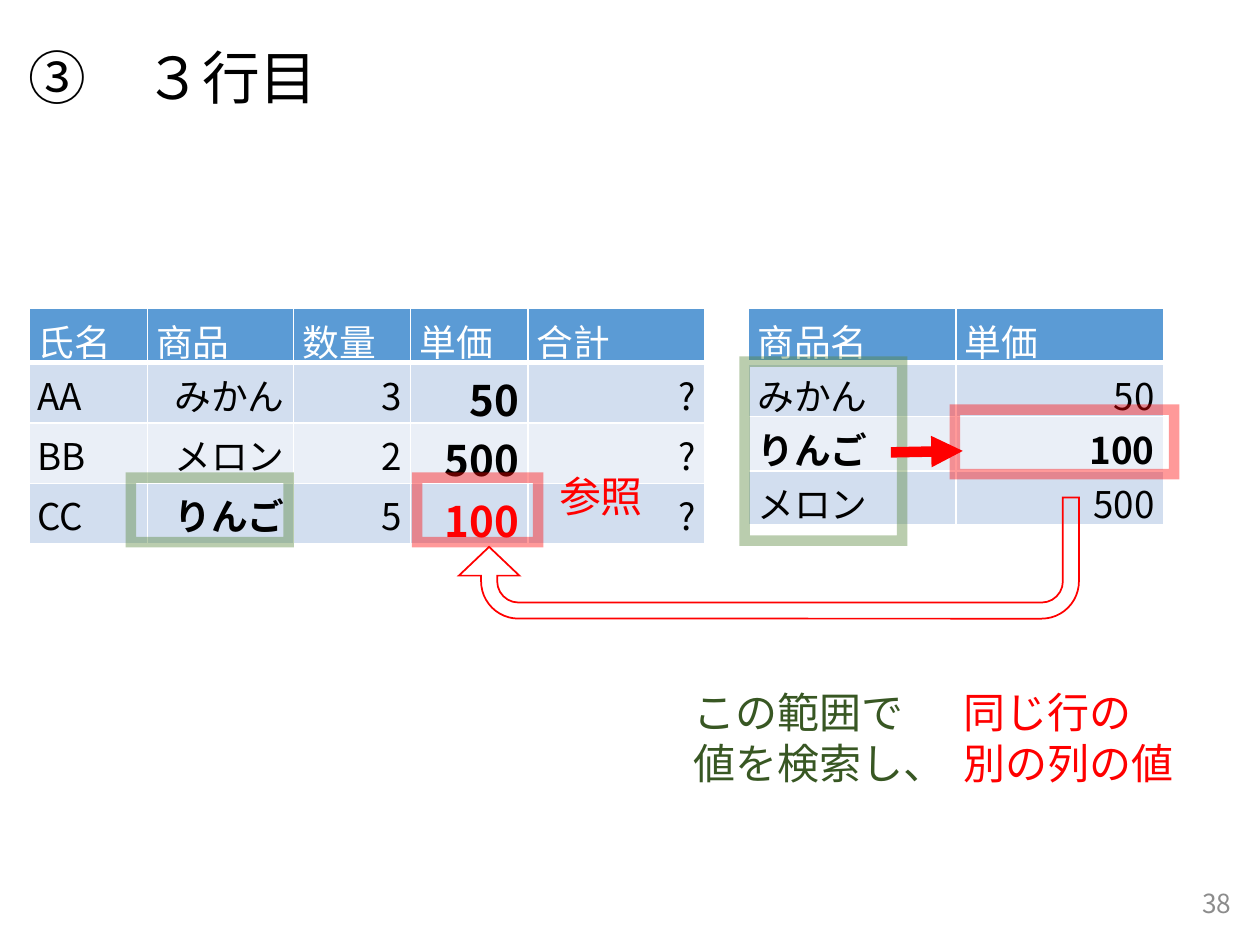
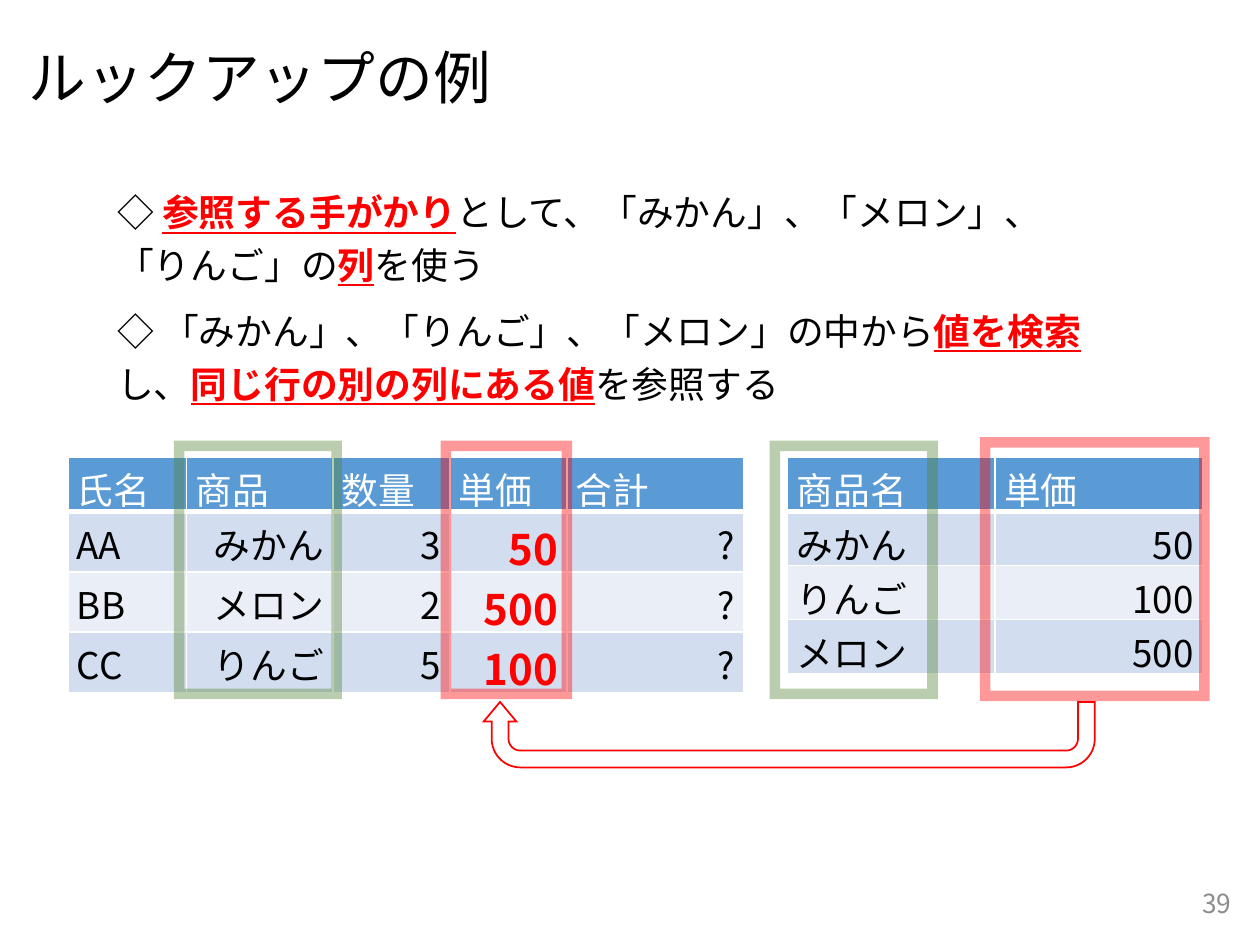
from dataclasses import dataclass

from lxml import etree
from pptx import Presentation
from pptx.dml.color import RGBColor
from pptx.enum import shapes, text
from pptx.oxml import ns
from pptx.util import Cm, Pt


@dataclass(frozen=True)
class Theme:
    heading_font: str = "Lato"
    font: str = "Noto Sans CJK JP"
    black: str = "000000"
    white: str = "FFFFFF"
    grey: str = "8C8C8C"
    red: str = "FF0000"
    green: str = "548235"
    dark_green: str = "385723"
    header: str = "5B9BD5"
    bands: tuple = ("D2DEEF", "EAEFF7")
    title_size: float = 33
    body_size: float = 21
    strong_size: float = 24
    number_size: float = 15
    frame_width: float = 6
    thin_width: float = 1


THEME = Theme()
LEFT, RIGHT = text.PP_ALIGN.LEFT, text.PP_ALIGN.RIGHT
TITLE_BOX = (0.33, 0.53, 24.5, 2.18)
BODY_BOX = (2.11, 3.53, 20.42, 10.77)
NUMBER_BOX = (19.35, 17.7, 5.72, 1.02)

ORDERS = [
    ["氏名", "商品", "数量", "単価", "合計"],
    ["AA", "みかん", "3", "50", "?"],
    ["BB", "メロン", "2", "500", "?"],
    ["CC", "りんご", "5", "100", "?"],
]
ORDER_COLUMNS = [2.39, 2.95, 2.36, 2.36, 3.56]
ORDER_ROWS = [1.07, 1.19, 1.19, 1.19]
PRICE_COLUMN = 3
PRICE_CELLS = {(row, PRICE_COLUMN) for row in (1, 2, 3)}

PRODUCTS = [["商品名", "単価"], ["みかん", "50"], ["りんご", "100"], ["メロン", "500"]]
PRODUCT_COLUMNS = [4.18] * 2
PRODUCT_ROWS = [1.07] * 4
PRODUCTS_OFFSET = 14.51

BULLETS = [
    [("◇ ", False), ("参照する手がかり", True),
     ("として、「みかん」、「メロン」、「りんご」の", False), ("列", True), ("を使う", False)],
    [("◇ 「みかん」、「りんご」、「メロン」の中から", False), ("値を検索", True),
     ("し、", False), ("同じ行の別の列にある値", True), ("を参照する", False)],
]


def lengths(box):
    return [Cm(value) for value in box]


def shifted(origin, box):
    return lengths((origin[0] + box[0], origin[1] + box[1], *box[2:]))


def place(part, box):
    part.left, part.top, part.width, part.height = lengths(box)


def add_xml(parent, tag, **attributes):
    return etree.SubElement(parent, ns.qn(tag), attributes)


def style(font, size, color, bold=False, name=THEME.font):
    font.size = Pt(size)
    font.bold = bold
    font.name = name
    font.color.rgb = RGBColor.from_string(color)
    east_asian = etree.Element(ns.qn("a:ea"), typeface=THEME.font)
    font._element.find(ns.qn("a:latin")).addnext(east_asian)


def add_title(slide, words):
    title = slide.shapes.title
    place(title, TITLE_BOX)
    title.text_frame.text = words
    title.text_frame.auto_size = text.MSO_AUTO_SIZE.NONE
    title.text_frame.vertical_anchor = text.MSO_ANCHOR.MIDDLE
    paragraph = title.text_frame.paragraphs[0]
    paragraph.alignment = LEFT
    paragraph.line_spacing = 0.9
    style(paragraph.font, THEME.title_size, THEME.black, name=THEME.heading_font)


def add_page_number(slide, number):
    frame = slide.shapes.add_textbox(*lengths(NUMBER_BOX)).text_frame
    frame.text = str(number)
    frame.word_wrap = True
    frame.vertical_anchor = text.MSO_ANCHOR.MIDDLE
    frame.paragraphs[0].alignment = RIGHT
    style(frame.paragraphs[0].font, THEME.number_size, THEME.grey)


def add_explanation(slide):
    body = slide.placeholders[1]
    place(body, BODY_BOX)
    frame = body.text_frame
    frame.auto_size = text.MSO_AUTO_SIZE.NONE
    for index, bullet in enumerate(BULLETS):
        paragraph = frame.add_paragraph() if index else frame.paragraphs[0]
        paragraph.line_spacing = 1.2
        paragraph.space_before = Pt(7.5)
        properties = paragraph._p.get_or_add_pPr()
        properties.set("marL", "0")
        properties.set("indent", "0")
        add_xml(properties, "a:buNone")
        for words, key in bullet:
            run = paragraph.add_run()
            run.text = words
            run.font.underline = key
            style(run.font, THEME.body_size, THEME.red if key else THEME.black,
                  key, THEME.heading_font)


def add_borders(cell, is_header):
    properties = cell._tc.get_or_add_tcPr()
    for side in "LRTB":
        width = 3 if is_header and side == "B" else THEME.thin_width
        border = add_xml(properties, f"a:ln{side}", w=str(Pt(width)))
        add_xml(add_xml(border, "a:solidFill"), "a:srgbClr", val=THEME.white)


def fill_cell(cell, words, row, align, size, color, bold):
    add_borders(cell, row == 0)
    cell.fill.solid()
    background = THEME.bands[(row - 1) % 2] if row else THEME.header
    cell.fill.fore_color.rgb = RGBColor.from_string(background)
    cell.margin_left = cell.margin_right = Cm(0.18)
    cell.margin_top = cell.margin_bottom = Cm(0.1)
    cell.text = words
    paragraph = cell.text_frame.paragraphs[0]
    paragraph.alignment = align
    style(paragraph.font, size, color, bold)


def add_grid(slide, corner, values, columns, rows, bold=(), red=(), large=()):
    box = (*corner, sum(columns), sum(rows))
    table = slide.shapes.add_table(len(rows), len(columns), *lengths(box)).table
    for column, width in zip(table.columns, columns):
        column.width = Cm(width)
    for row, height in zip(table.rows, rows):
        row.height = Cm(height)
    for r, line in enumerate(values):
        for c, words in enumerate(line):
            spot = (r, c)
            color = THEME.white if r == 0 else THEME.red if spot in red else THEME.black
            size = THEME.strong_size if spot in large else THEME.body_size
            fill_cell(table.cell(r, c), words, r, RIGHT if r and c else LEFT,
                      size, color, spot in bold)


def add_tables(slide, origin, found_orders, found_products, red):
    x, y = origin
    add_grid(slide, (x + PRODUCTS_OFFSET, y), PRODUCTS, PRODUCT_COLUMNS, PRODUCT_ROWS,
             bold=found_products)
    add_grid(slide, origin, ORDERS, ORDER_COLUMNS, ORDER_ROWS,
             bold=PRICE_CELLS | found_orders, red=red, large=PRICE_CELLS)


def add_outline(slide, kind, box, color, width):
    outline = slide.shapes.add_shape(kind, *box)
    outline.shadow.inherit = False
    outline.fill.background()
    outline.line.color.rgb = RGBColor.from_string(color)
    outline.line.width = Pt(width)
    add_xml(outline.line._get_or_add_ln(), "a:miter", lim="800000")
    return outline


def add_frames(slide, origin, frames):
    for color, box in frames:
        frame = add_outline(slide, shapes.MSO_SHAPE.RECTANGLE, shifted(origin, box),
                            color, THEME.frame_width)
        tint = frame.line._get_or_add_ln().find(".//" + ns.qn("a:srgbClr"))
        add_xml(tint, "a:alpha", val="40000")


def add_return_arrow(slide, origin, box, adjustments):
    arrow = add_outline(slide, shapes.MSO_SHAPE.U_TURN_ARROW, shifted(origin, box),
                        THEME.red, THEME.thin_width)
    arrow.rotation = 180
    for index, value in enumerate(adjustments):
        arrow.adjustments[index] = value


def add_match_arrow(slide, origin, start, end):
    arrow = slide.shapes.add_connector(
        shapes.MSO_CONNECTOR.STRAIGHT, *shifted(origin, start), *shifted(origin, end))
    arrow.line.color.rgb = RGBColor.from_string(THEME.red)
    arrow.line.width = Pt(THEME.frame_width)
    add_xml(arrow.line._get_or_add_ln(), "a:tailEnd", type="triangle")
    add_xml(arrow._element.spPr, "a:effectLst")


def add_caption(slide, origin, box, lines, color):
    frame = slide.shapes.add_textbox(*shifted(origin, box)).text_frame
    frame.word_wrap = False
    frame.auto_size = text.MSO_AUTO_SIZE.SHAPE_TO_FIT_TEXT
    frame.text = "\n".join(lines)
    for paragraph in frame.paragraphs:
        style(paragraph.font, THEME.strong_size, color)


def start_slide(deck, layout, title, number):
    slide = deck.slides.add_slide(deck.slide_layouts.get_by_name(layout))
    add_title(slide, title)
    add_page_number(slide, number)
    return slide


def build_third_row(deck, origin=(0.58, 6.22)):
    slide = start_slide(deck, "Title Only", "③　３行目", 38)
    add_tables(slide, origin, {(3, 1)}, {(2, 0), (2, 1)}, {(3, PRICE_COLUMN)})
    add_frames(slide, origin, [
        (THEME.red, (18.67, 2.04, 4.42, 1.3)),
        (THEME.red, (7.83, 3.41, 2.44, 1.3)),
        (THEME.green, (2.06, 3.41, 3.18, 1.3)),
        (THEME.green, (14.43, 1.07, 3.18, 3.61)),
    ])
    add_match_arrow(slide, origin, (17.38, 2.9), (18.83, 2.87))
    add_return_arrow(slide, origin, (8.67, 3.81, 12.5, 2.44),
                     (0.133, 0.25, 0.238, 0.308, 0.593))
    add_caption(slide, origin, (13.16, 7.5, 5.64, 2.31),
                ["この範囲で", "値を検索し、"], THEME.dark_green)
    add_caption(slide, origin, (18.6, 7.5, 4.78, 2.31),
                ["同じ行の", "別の列の値"], THEME.red)
    add_caption(slide, origin, (10.44, 3.15, 2.24, 1.27), ["参照"], THEME.red)


def build_lookup_example(deck, origin=(1.37, 9.22)):
    slide = start_slide(deck, "Title and Content", "ルックアップの例", 39)
    add_explanation(slide)
    add_tables(slide, origin, set(), set(), PRICE_CELLS)
    add_frames(slide, origin, [
        (THEME.red, (18.49, -0.3, 4.42, 5.11)),
        (THEME.red, (7.62, -0.23, 2.44, 5)),
        (THEME.green, (2.24, -0.23, 3.18, 5)),
        (THEME.green, (14.25, -0.23, 3.18, 5)),
    ])
    add_return_arrow(slide, origin, (8.38, 4.93, 12.32, 1.32),
                     (0.257, 0.25, 0.299, 0.438, 1))


def main():
    deck = Presentation()
    deck.slide_width, deck.slide_height = Cm(25.4), Cm(19.05)
    build_third_row(deck)
    build_lookup_example(deck)
    deck.save("out.pptx")


if __name__ == "__main__":
    main()
